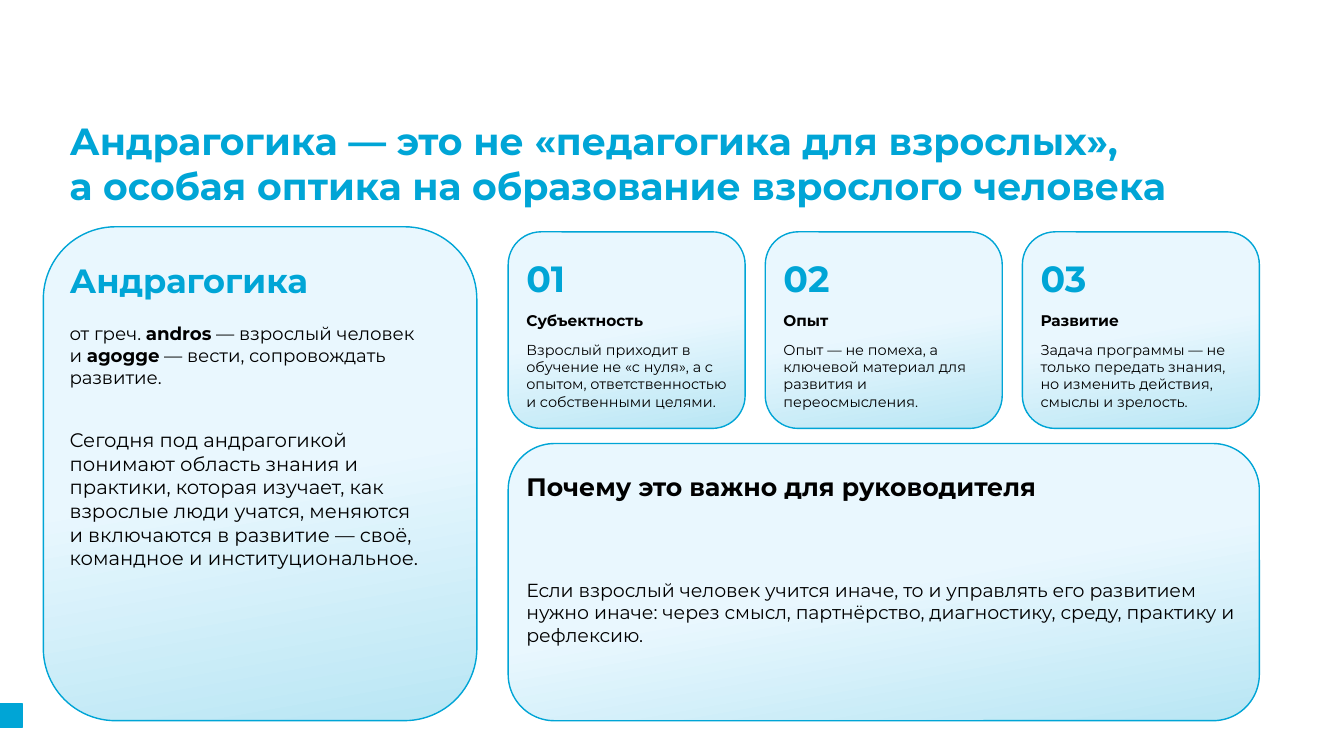
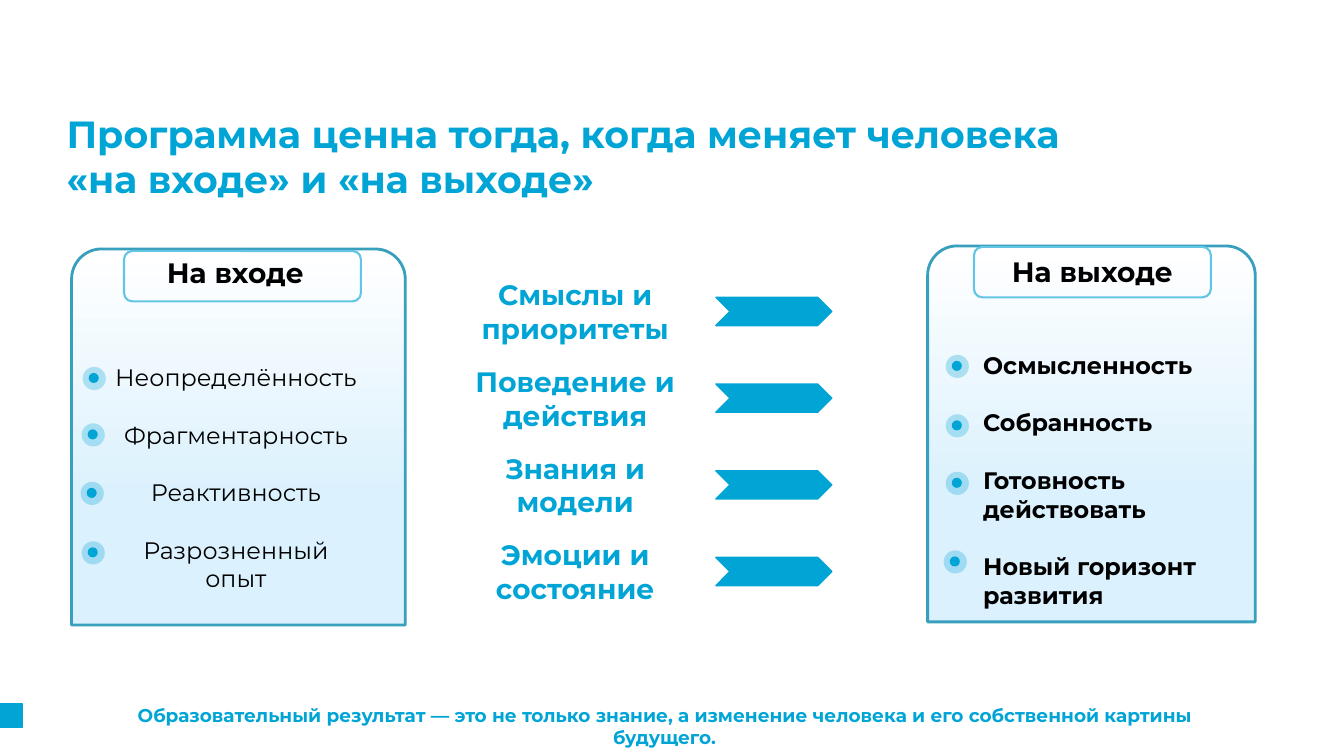
from lxml import etree
from pptx import Presentation
from pptx.dml.color import RGBColor
from pptx.enum.shapes import MSO_SHAPE
from pptx.enum.text import MSO_ANCHOR, MSO_AUTO_SIZE, PP_ALIGN
from pptx.oxml.ns import qn
from pptx.util import Inches, Pt

RECT = MSO_SHAPE.RECTANGLE
ROUND = MSO_SHAPE.ROUNDED_RECTANGLE
TAB = MSO_SHAPE.ROUND_2_SAME_RECTANGLE
CHEVRON = MSO_SHAPE.CHEVRON
OVAL = MSO_SHAPE.OVAL
LEFT, CENTER = PP_ALIGN.LEFT, PP_ALIGN.CENTER
MIDDLE = MSO_ANCHOR.MIDDLE
NO_FIT = MSO_AUTO_SIZE.NONE

FONT = "Montserrat"
BLUE = RGBColor(0x00, 0xA5, 0xD6)
BLACK = RGBColor(0x00, 0x00, 0x00)
WHITE = RGBColor(0xFF, 0xFF, 0xFF)
AQUA = RGBColor(0xB8, 0xE6, 0xF4)
MIST = RGBColor(0xE9, 0xF7, 0xFE)
PALE = RGBColor(0xDB, 0xF1, 0xFD)
TEAL = RGBColor(0x38, 0x9F, 0xBD)
SKY = RGBColor(0x63, 0xC5, 0xE4)

TITLE_ONLY, TWO_LISTS = 5, 3

TRAITS = [
    ("Субъектность", "Взрослый приходит в обучение не «с нуля», а с опытом, "
     "ответственностью и собственными целями."),
    ("Опыт", "Опыт — не помеха, а ключевой материал для развития и "
     "переосмысления."),
    ("Развитие", "Задача программы — не только передать знания, но изменить "
     "действия, смыслы и зрелость."),
]
SHIFTS = ["Смыслы и приоритеты", "Поведение и действия", "Знания и модели",
          "Эмоции и состояние"]
BEFORE = ["Неопределённость", "Фрагментарность", "Реактивность",
          "Разрозненный опыт"]
AFTER = ["Осмысленность", "Собранность", "Готовность действовать",
         "Новый горизонт развития"]
DOTS_IN = [(0.82, 3.64), (0.81, 4.2), (0.8, 4.78), (0.81, 5.37)]
DOTS_OUT = [(9.38, 3.52), (9.38, 4.11), (9.38, 4.68), (9.36, 5.46)]


def write(box, lines, size, color=BLACK, bold=False, align=LEFT, gap=0):
    """Fill a text frame; parts between asterisks are bold."""
    frame = box.text_frame
    frame.word_wrap = True
    frame.auto_size = NO_FIT
    frame.vertical_anchor = MIDDLE
    frame.margin_left = frame.margin_right = 0
    frame.margin_top = frame.margin_bottom = 0
    for i, line in enumerate(lines):
        para = frame.add_paragraph() if i else frame.paragraphs[0]
        para.alignment = align
        para.space_before = Pt(gap if i else 0)
        for j, part in enumerate(line.split("*")):
            run = para.add_run()
            run.text = part
            if j % 2:
                run.font.bold = True
        font = para.font
        font.name, font.size, font.bold = FONT, Pt(size), bold
        font.color.rgb = color


def add_text(slide, at, lines, size, **style):
    box = slide.shapes.add_textbox(*map(Inches, at))
    write(box, lines, size, **style)


def fill_holder(holder, at, lines, size, **style):
    """Move a placeholder to the front, drop its bullets and fill it."""
    holder.left, holder.top, holder.width, holder.height = map(Inches, at)
    holder._element.getparent().append(holder._element)
    write(holder, lines, size, **style)
    for para in holder.text_frame.paragraphs:
        props = para._p.get_or_add_pPr()
        props.set("marL", "0")
        props.set("indent", "0")
        mark = etree.Element(qn("a:buNone"))
        props.find(qn("a:spcBef")).addnext(mark)


def add_shape(shapes, kind, at, fill=None, line=None, width=1):
    shape = shapes.add_shape(kind, *map(Inches, at))
    shape.shadow.inherit = False
    if fill is None:
        shape.fill.background()
    else:
        shape.fill.solid()
        shape.fill.fore_color.rgb = fill
    if line is None:
        shape.line.fill.background()
    else:
        shape.line.color.rgb = line
        shape.line.width = Pt(width)
    return shape


def shade(shape, angle, start, end, stop):
    """Blend two colours, the second one reached at stop."""
    shape.fill.gradient()
    shape.fill.gradient_angle = angle
    first, last = shape.fill.gradient_stops
    first.color.rgb, last.color.rgb = start, end
    first.position, last.position = 0, stop


def add_card(slide, at):
    card = add_shape(slide.shapes, ROUND, at, line=BLUE)
    shade(card, 100, AQUA, MIST, 0.5)


def add_panel(slide, at):
    panel = add_shape(slide.shapes, TAB, at, line=TEAL, width=2)
    panel.adjustments[0] = 0.09
    shade(panel, 270, WHITE, PALE, 0.66)


def add_dot(slide, x, y):
    shapes = slide.shapes.add_group_shape().shapes
    halo = add_shape(shapes, OVAL, (x, y, 0.23, 0.23), BLUE)
    tint = halo._element.spPr.find(".//" + qn("a:srgbClr"))
    etree.SubElement(tint, qn("a:alpha"), val="28000")
    add_shape(shapes, OVAL, (x + 0.06, y + 0.06, 0.1, 0.1), BLUE)


def new_slide(deck, layout, at, title):
    slide = deck.slides.add_slide(deck.slide_layouts[layout])
    add_shape(slide.shapes, RECT, (0, 6.98, 0.22, 0.24), BLUE, BLUE)
    fill_holder(slide.shapes.title, at, title, 27, color=BLUE, bold=True)
    return slide


def build_idea(deck):
    slide = new_slide(deck, TITLE_ONLY, (0.69, 1.14, 11.24, 0.95), [
        "Андрагогика — это не «педагогика для взрослых»,",
        "а особая оптика на образование взрослого человека"])

    add_card(slide, (0.43, 2.25, 4.3, 4.9))
    add_text(slide, (0.69, 2.58, 2.5, 0.4), ["Андрагогика"], 24,
             color=BLUE, bold=True)
    add_text(slide, (0.69, 3.1, 3.6, 0.85), [
        "от греч. *andros* — взрослый человек",
        "и *agogge* — вести, сопровождать развитие."], 13)
    add_text(slide, (0.69, 4.15, 3.55, 1.6), [
        "Сегодня под андрагогикой понимают область знания и практики, "
        "которая изучает, как взрослые люди учатся, меняются и включаются "
        "в развитие — своё, командное и институциональное."], 14)

    for i, (name, note) in enumerate(TRAITS):
        x = 5.04 + 2.55 * i
        add_card(slide, (x, 2.3, 2.35, 1.95))
        x += 0.18
        add_text(slide, (x, 2.48, 1.99, 0.55), [f"{i + 1:02}"], 26,
                 color=BLUE, bold=True)
        add_text(slide, (x, 3.02, 1.99, 0.32), [name], 11, bold=True)
        add_text(slide, (x, 3.44, 1.99, 0.57), [note], 10.3)

    add_card(slide, (5.04, 4.4, 7.45, 2.75))
    add_text(slide, (5.22, 4.62, 7.09, 0.42),
             ["Почему это важно для руководителя"], 18, bold=True)
    add_text(slide, (5.22, 5.15, 7.09, 1.85), [
        "Если взрослый человек учится иначе, то и управлять его развитием "
        "нужно иначе: через смысл, партнёрство, диагностику, среду, "
        "практику и рефлексию."], 13.5)


def build_change(deck):
    slide = new_slide(deck, TWO_LISTS, (0.66, 1.07, 10.62, 0.95), [
        "Программа ценна тогда, когда меняет человека «на входе» "
        "и «на выходе»"])
    before, after = list(slide.placeholders)[:2]
    before, after = (h for h in slide.placeholders
                     if h.placeholder_format.idx in (1, 2))

    add_panel(slide, (0.71, 2.47, 3.31, 3.73))
    add_panel(slide, (9.2, 2.44, 3.25, 3.73))
    add_shape(slide.shapes, ROUND, (1.23, 2.49, 2.35, 0.5),
              line=SKY, width=1.5)
    add_shape(slide.shapes, ROUND, (9.66, 2.45, 2.35, 0.5),
              line=SKY, width=1.5)
    add_text(slide, (1.42, 2.55, 1.83, 0.3), ["На входе"], 20,
             bold=True, align=CENTER)
    add_text(slide, (9.96, 2.54, 1.75, 0.3), ["На выходе"], 20,
             bold=True, align=CENTER)

    for i, shift in enumerate(SHIFTS):
        y = 2.95 + 0.86 * i
        add_text(slide, (4.58, y + 0.02, 2.25, 0.24), [shift], 20,
                 color=BLUE, bold=True, align=CENTER)
        add_shape(slide.shapes, CHEVRON, (7.1, y, 1.15, 0.28), BLUE, BLUE)

    fill_holder(before, (1.09, 3.64, 2.5, 2.2), BEFORE, 17,
                align=CENTER, gap=20.7)
    fill_holder(after, (9.75, 3.66, 2.5, 2.2), AFTER, 17,
                bold=True, gap=20.7)
    for x, y in DOTS_IN + DOTS_OUT:
        add_dot(slide, x, y)

    add_text(slide, (1.29, 7.05, 10.6, 0.3), [
        "Образовательный результат — это не только знание, а изменение "
        "человека и его собственной картины будущего."], 13.2,
        color=BLUE, bold=True, align=CENTER)


def main():
    deck = Presentation()
    deck.slide_width, deck.slide_height = Inches(13.33), Inches(7.5)
    build_idea(deck)
    build_change(deck)
    deck.save("out.pptx")


if __name__ == "__main__":
    main()
